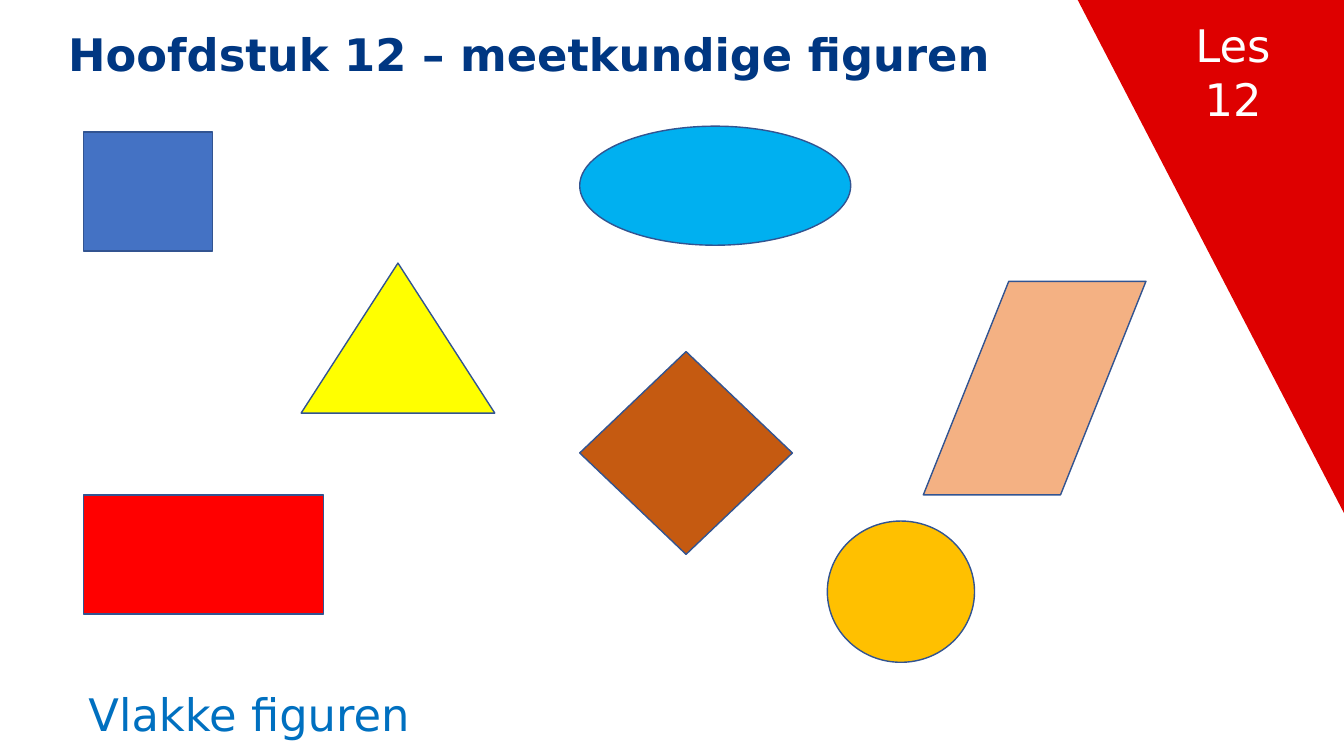
import pptx
import pptx.dml.color
import pptx.enum.shapes
import pptx.enum.text
import pptx.util

Cm = pptx.util.Cm
Pt = pptx.util.Pt
SHAPE = pptx.enum.shapes.MSO_SHAPE
ALIGN = pptx.enum.text.PP_ALIGN

FONT = "DejaVu Sans"
OUTLINE = "325491"
SLIDE_WIDTH, SLIDE_HEIGHT = 33.87, 19.05

FIGURES = [
    (SHAPE.RECTANGLE, 0, 0.15, 3.25, 3, "4472C4"),
    (SHAPE.RECTANGLE, 0, 9.29, 6.05, 3, "FF0000"),
    (SHAPE.ISOSCELES_TRIANGLE, 5.48, 3.45, 4.88, 3.78, "FFFF00"),
    (SHAPE.OVAL, 12.5, 0, 6.83, 3, "00B0F0"),
    (SHAPE.OVAL, 18.74, 9.95, 3.71, 3.56, "FFC000"),
    (SHAPE.DIAMOND, 12.5, 5.68, 5.36, 5.11, "C55A11"),
    (SHAPE.PARALLELOGRAM, 21.16, 3.91, 5.61, 5.38, "F4B183"),
]


def color(value):
    return pptx.dml.color.RGBColor.from_string(value)


def add_figure(slide, kind, left, top, width, height, fill, outline=None):
    figure = slide.shapes.add_shape(kind, Cm(left), Cm(top), Cm(width), Cm(height))
    figure.shadow.inherit = False
    figure.fill.solid()
    figure.fill.fore_color.rgb = color(fill)
    if outline:
        figure.line.color.rgb = color(outline)
        figure.line.width = Pt(1)
    else:
        figure.line.fill.background()
    return figure


def add_label(slide, box, lines, ink, align=ALIGN.LEFT, bold=False, wrap=True):
    label = slide.shapes.add_textbox(*[Cm(length) for length in box])
    frame = label.text_frame
    frame.word_wrap = wrap
    frame.auto_size = pptx.enum.text.MSO_AUTO_SIZE.SHAPE_TO_FIT_TEXT
    for index, line in enumerate(lines):
        paragraph = frame.add_paragraph() if index else frame.paragraphs[0]
        paragraph.alignment = align
        run = paragraph.add_run()
        run.text = line
        run.font.name = FONT
        run.font.size = Pt(32)
        run.font.bold = bold
        run.font.color.rgb = color(ink)


def add_lesson_corner(slide, left, top, width, height):
    corner = add_figure(slide, SHAPE.ISOSCELES_TRIANGLE, left, top, width, height, "DE0000")
    corner.adjustments[0] = 0
    corner.rotation = 180
    add_label(slide, (left + 2.29, top + 0.33, 3.25, 3), ["Les", "12"],
              "FFFFFF", align=ALIGN.CENTER)


def add_plane_figures(slide, left, top):
    for kind, across, down, width, height, fill in FIGURES:
        figure = add_figure(slide, kind, left + across, top + down,
                            width, height, fill, OUTLINE)
        if kind == SHAPE.PARALLELOGRAM:
            figure.adjustments[0] = 0.4


def main():
    deck = pptx.Presentation()
    deck.slide_width = Cm(SLIDE_WIDTH)
    deck.slide_height = Cm(SLIDE_HEIGHT)
    slide = deck.slides.add_slide(deck.slide_layouts[6])
    add_lesson_corner(slide, SLIDE_WIDTH - 6.71, 0, 6.71, 12.93)
    add_label(slide, (1.47, 0.56, 24.08, 1.63), ["Hoofdstuk 12 – meetkundige figuren"],
              "003782", bold=True, wrap=False)
    add_plane_figures(slide, 2.11, 3.18)
    add_label(slide, (1.98, 17.17, 12.34, 1.63), ["Vlakke figuren"], "0070C0")
    deck.save("out.pptx")


if __name__ == "__main__":
    main()
